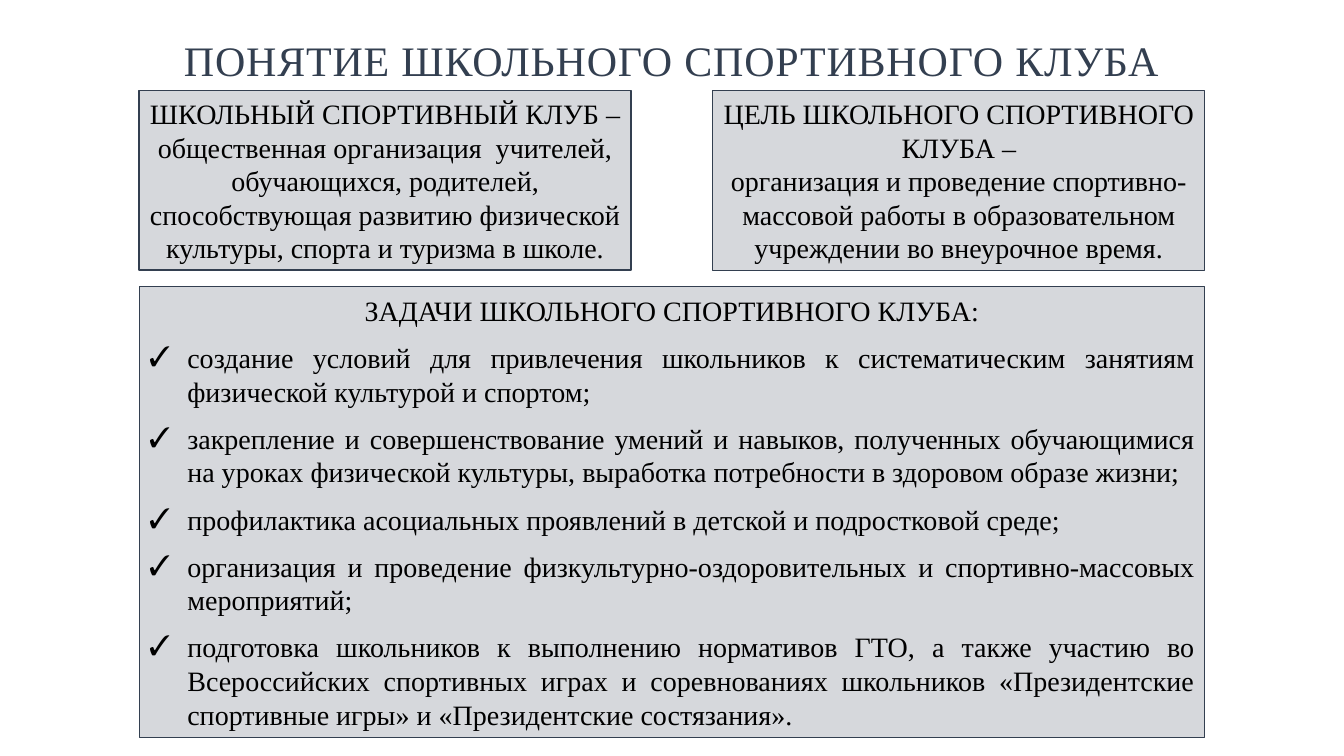
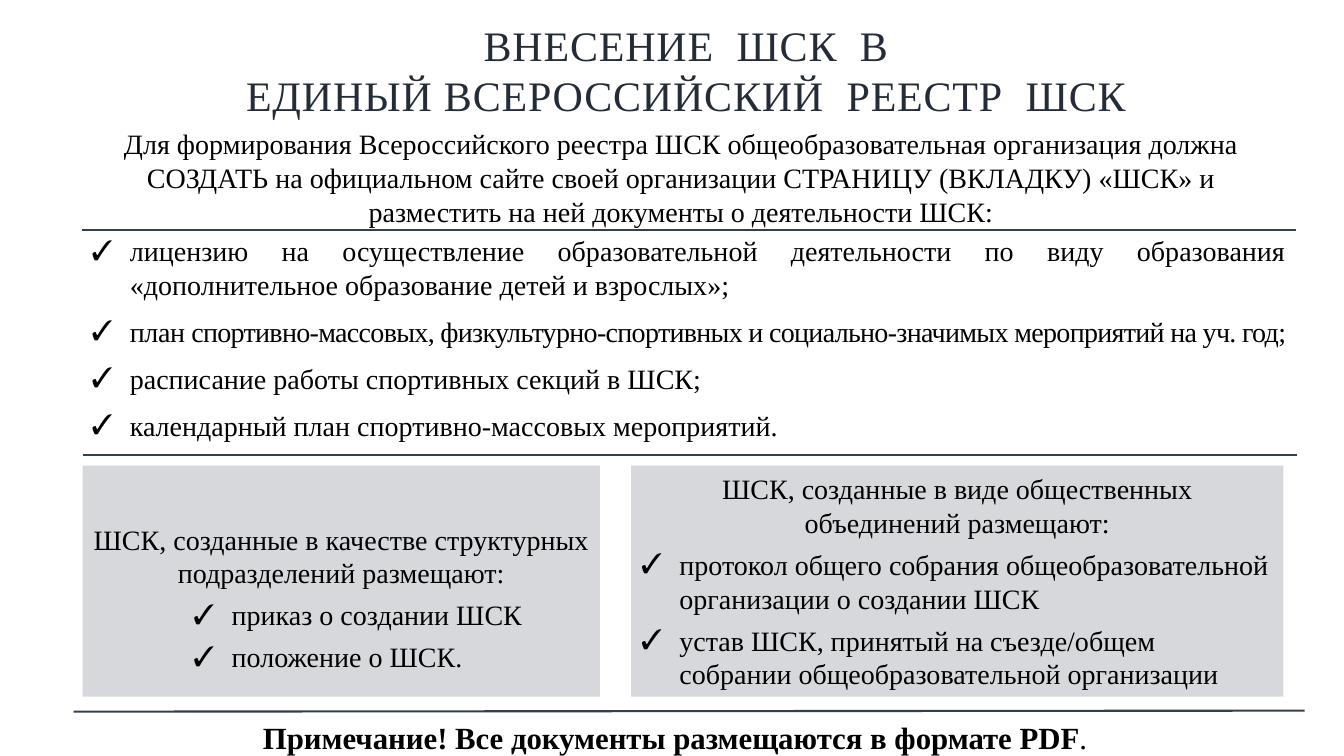
from dataclasses import dataclass

from lxml import etree
from pptx import Presentation
from pptx import util as u
from pptx.dml.color import RGBColor
from pptx.enum import shapes, text
from pptx.oxml.ns import qn

SCALE = 9144  # EMU in one px, 100 px to the inch
MID, JUST, LEFT = text.PP_ALIGN.CENTER, text.PP_ALIGN.JUSTIFY, text.PP_ALIGN.LEFT


@dataclass(frozen=True)
class Theme:
    font: str = "Times New Roman"
    slate: str = "333F50"
    navy: str = "242C38"
    ink: str = "000000"
    tint: int = 20
    title: int = 30
    body: int = 20
    note: int = 22
    wide: float = 0.6
    hang: int = 38
    gap: float = 9.6
    tight: float = 6


T = Theme()


@dataclass(frozen=True)
class Run:
    text: str
    size: int = T.body
    color: str = T.ink
    bold: bool = False
    track: float = 0


@dataclass(frozen=True)
class Para:
    runs: tuple[Run, ...]
    align: text.PP_ALIGN = MID
    before: float = 0
    left: int = 0
    mark: bool = False


@dataclass(frozen=True)
class Box:
    left: int
    top: int
    width: int
    height: int
    paras: list[Para]
    fill: bool = False
    edge: float = 0
    inset: int = 5
    wrap: bool = True


@dataclass(frozen=True)
class Rule:
    x1: int
    y1: int
    x2: int
    y2: int


def px(n: int) -> u.Emu:
    return u.Emu(n * SCALE)


def rgb(code: str) -> RGBColor:
    return RGBColor.from_string(code)


def plain(words: str) -> Para:
    return Para((Run(words),))


def title(words: str, color: str) -> Para:
    return Para((Run(words, T.title, color, track=T.wide),))


def item(*runs: Run, align=JUST, before=T.gap, left=T.hang) -> Para:
    return Para(runs, align, before, left, True)


def items(lines: list[str], **style) -> list[Para]:
    return [item(Run(line), **style) for line in lines]


def add_run(para, run: Run) -> None:
    """Add the text of a run, with a line break at each newline."""
    for i, part in enumerate(run.text.split("\n")):
        if i:
            para.add_line_break()
        r = para.add_run()
        r.text = part
        r.font.name = T.font
        r.font.size = u.Pt(run.size)
        r.font.bold = run.bold
        r.font.color.rgb = rgb(run.color)
        if run.track:
            r.font._element.set("spc", str(round(run.track * 100)))


def add_mark(para, left: int) -> None:
    """Give a paragraph a hanging check mark."""
    props = para._p.get_or_add_pPr()
    props.set("marL", str(px(left)))
    props.set("indent", str(px(-T.hang)))
    etree.SubElement(props, qn("a:buFont")).set("typeface", T.font)
    etree.SubElement(props, qn("a:buChar")).set("char", "✓")


def add_box(slide, box: Box) -> None:
    area = [px(n) for n in (box.left, box.top, box.width, box.height)]
    if box.fill:
        shape = slide.shapes.add_shape(shapes.MSO_SHAPE.RECTANGLE, *area)
        shape.shadow.inherit = False
        shape.fill.solid()
        shape.fill.fore_color.rgb = rgb(T.slate)
        tone = shape.fill._xPr.find(".//" + qn("a:srgbClr"))
        etree.SubElement(tone, qn("a:alpha")).set("val", str(T.tint * 1000))
        if box.edge:
            shape.line.color.rgb = rgb(T.slate)
            shape.line.width = u.Pt(box.edge)
        else:
            shape.line.fill.background()
    else:
        shape = slide.shapes.add_textbox(*area)
    frame = shape.text_frame
    frame.word_wrap = box.wrap
    frame.margin_top = px(box.inset)
    frame.vertical_anchor = text.MSO_ANCHOR.MIDDLE if box.fill else text.MSO_ANCHOR.TOP
    for i, spec in enumerate(box.paras):
        para = frame.add_paragraph() if i else frame.paragraphs[0]
        para.alignment = spec.align
        if i and spec.before:
            para.space_before = u.Pt(spec.before)
        if spec.mark:
            add_mark(para, spec.left)
        for run in spec.runs:
            add_run(para, run)


def add_rule(slide, rule: Rule) -> None:
    ends = [px(n) for n in (rule.x1, rule.y1, rule.x2, rule.y2)]
    line = slide.shapes.add_connector(shapes.MSO_CONNECTOR.STRAIGHT, *ends)
    line.line.color.rgb = rgb(T.slate)
    line.line.width = u.Pt(1.5)
    etree.SubElement(line._element.spPr, qn("a:effectLst"))


CLUB = [
    Box(138, 90, 488, 178, [plain(
        "ШКОЛЬНЫЙ СПОРТИВНЫЙ КЛУБ – общественная организация  учителей, обучающихся, "
        "родителей, способствующая развитию физической культуры, спорта и туризма в школе.")],
        fill=True, edge=1),
    Box(707, 90, 488, 178, [plain(
        "ЦЕЛЬ ШКОЛЬНОГО СПОРТИВНОГО КЛУБА –\nорганизация и проведение спортивно-массовой "
        "работы в образовательном учреждении во внеурочное время.")],
        fill=True, edge=0.75),
    Box(138, 284, 1057, 448, [plain("ЗАДАЧИ ШКОЛЬНОГО СПОРТИВНОГО КЛУБА:"), *items([
        "создание условий для привлечения школьников к систематическим занятиям "
        "физической культурой и спортом;",
        "закрепление и совершенствование умений и навыков, полученных обучающимися на "
        "уроках физической культуры, выработка потребности в здоровом образе жизни;",
        "профилактика асоциальных проявлений в детской и подростковой среде;",
        "организация и проведение физкультурно-оздоровительных и спортивно-массовых "
        "мероприятий;",
        "подготовка школьников к выполнению нормативов ГТО, а также участию во "
        "Всероссийских спортивных играх и соревнованиях школьников «Президентские "
        "спортивные игры» и «Президентские состязания».",
    ])], fill=True, edge=0.75),
    Box(71, 29, 1191, 61, [title("ПОНЯТИЕ ШКОЛЬНОГО СПОРТИВНОГО КЛУБА", T.slate)]),
]

LIST = [
    Box(182, 14, 998, 111, [title(
        "ВНЕСЕНИЕ  ШСК  В\nЕДИНЫЙ ВСЕРОССИЙСКИЙ  РЕЕСТР  ШСК", T.navy)]),
    Box(98, 121, 1155, 111, [plain(
        "Для формирования Всероссийского реестра ШСК общеобразовательная организация "
        "должна СОЗДАТЬ на официальном сайте своей организации СТРАНИЦУ (ВКЛАДКУ) «ШСК» "
        "и разместить на ней документы о деятельности ШСК:")]),
    Box(81, 227, 1204, 219, [
        item(Run("лицензию на осуществление образовательной деятельности по виду "
                 "образования «дополнительное образование детей и взрослых»;")),
        item(Run("план", track=-0.3),
             Run(" спортивно-массовых, физкультурно-спортивных и социально-значимых "
                 "мероприятий на уч. год;", track=-0.5)),
        *items(["расписание работы спортивных секций в ШСК;",
                "календарный план спортивно-массовых мероприятий."]),
    ]),
    Box(82, 462, 513, 229, [
        plain("ШСК, созданные в качестве структурных подразделений размещают:"),
        *items(["приказ о создании ШСК", "положение о ШСК."],
               align=LEFT, before=T.tight, left=T.hang + 100),
    ], fill=True, inset=38),
    Box(626, 462, 647, 229, [
        plain("ШСК, созданные в виде общественных объединений размещают:"),
        *items(["протокол общего собрания общеобразовательной организации о создании ШСК",
                "устав ШСК, принятый на съезде/общем собрании общеобразовательной "
                "организации"], align=LEFT, before=T.tight),
    ], fill=True),
    Box(246, 708, 847, 47, [Para((
        Run("Примечание! Все документы размещаются в формате PDF", T.note, bold=True),
        Run(".", T.note)))], wrap=False),
]

RULES = [Rule(81, 228, 1285, 228), Rule(82, 451, 1286, 451), Rule(73, 706, 1294, 705)]


def main() -> None:
    deck = Presentation()
    deck.slide_width, deck.slide_height = px(1333), px(750)
    for boxes, rules in ((CLUB, []), (LIST, RULES)):
        slide = deck.slides.add_slide(deck.slide_layouts[6])
        for box in boxes:
            add_box(slide, box)
        for rule in rules:
            add_rule(slide, rule)
    deck.save("out.pptx")


if __name__ == "__main__":
    main()
